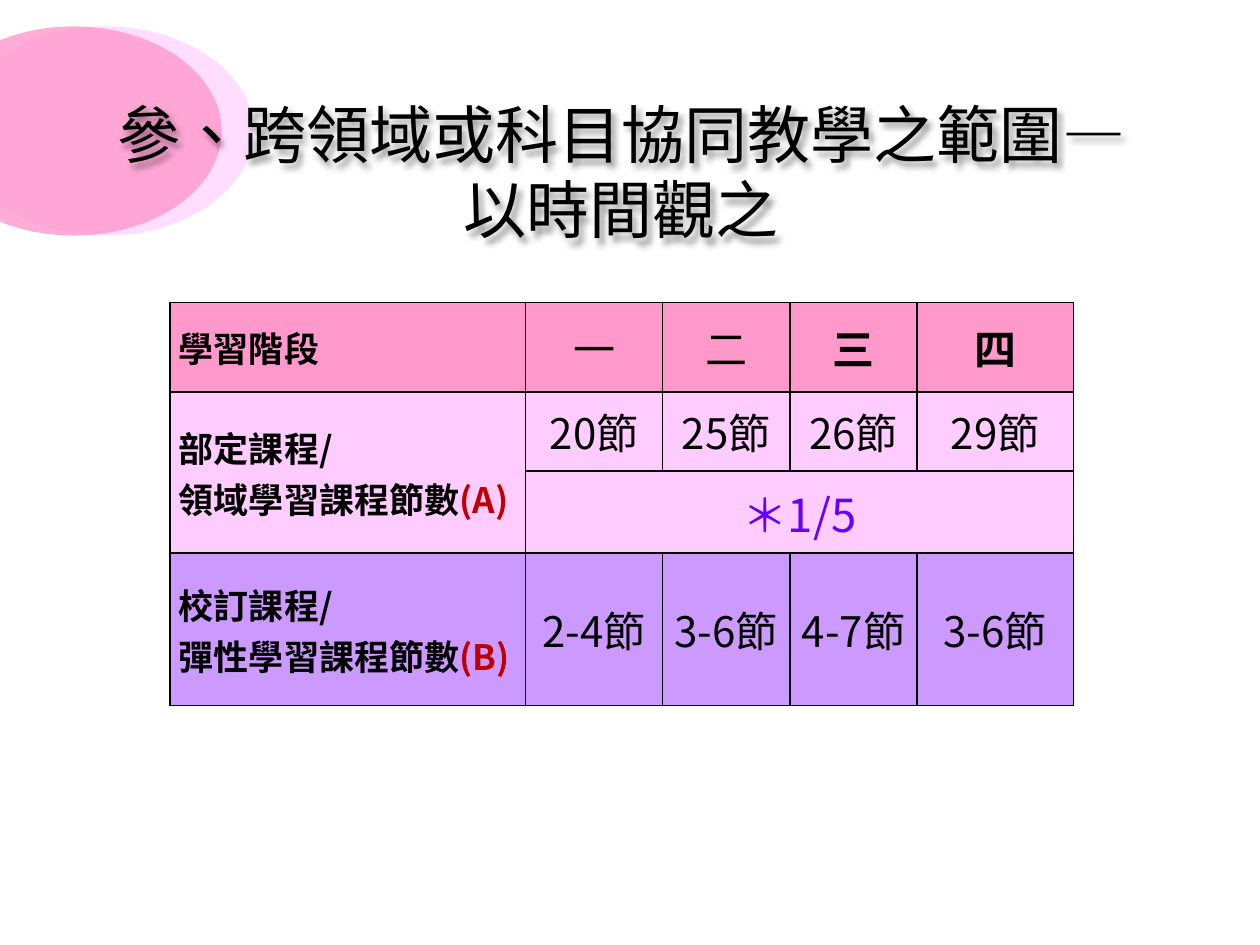
import pptx
import pptx.util
import pptx.dml.color
import pptx.enum.shapes
import pptx.enum.text
import pptx.oxml
import pptx.oxml.ns
from lxml import etree

Inches = pptx.util.Inches
Pt = pptx.util.Pt
qn = pptx.oxml.ns.qn
ALIGN = pptx.enum.text.PP_ALIGN
MIDDLE = pptx.enum.text.MSO_ANCHOR.MIDDLE
SANS = "Noto Sans CJK SC"
NS = 'xmlns:a="http://schemas.openxmlformats.org/drawingml/2006/main"'
COLORS = {
    "black": "000000", "red": "C00000", "blue": "6600FF", "pink": "FF99CC",
    "pale": "FFD5FF", "light": "FFCCFF", "violet": "CC99FF",
}


def rgb(name):
    return pptx.dml.color.RGBColor.from_string(COLORS[name])


def add_run(para, text, size, color="black", bold=False, face=SANS):
    run = para.add_run()
    run.text = text
    run.font.size = Pt(size)
    run.font.bold = bold
    run.font.color.rgb = rgb(color)
    run.font.name = face
    run.font._element.set("lang", "zh-TW")
    latin = run.font._element.find(qn("a:latin"))
    latin.addnext(pptx.oxml.parse_xml(f'<a:ea {NS} typeface="{SANS}"/>'))


deck = pptx.Presentation()
deck.slide_width = Inches(10)
deck.slide_height = Inches(7.5)
slide = deck.slides.add_slide(deck.slide_layouts[6])

group = slide.shapes.add_group_shape()
for left, color in ((-0.34, "pale"), (-0.59, "pink")):
    oval = group.shapes.add_shape(
        pptx.enum.shapes.MSO_SHAPE.OVAL,
        Inches(left), Inches(0.21), Inches(2.35), Inches(1.66))
    oval.shadow.inherit = False
    oval.fill.solid()
    oval.fill.fore_color.rgb = rgb(color)
    oval.line.fill.background()
    tint = oval._element.spPr.find(qn("a:solidFill"))[0]
    etree.SubElement(tint, qn("a:alpha"), val="80000")

title = slide.shapes.add_textbox(Inches(0.43), Inches(0.73), Inches(9), Inches(1.25))
title._element.spPr.append(pptx.oxml.parse_xml(
    f'<a:effectLst {NS}><a:outerShdw blurRad="50800" dist="38100" dir="2700000">'
    f'<a:srgbClr val="{COLORS["black"]}"><a:alpha val="40000"/></a:srgbClr>'
    '</a:outerShdw></a:effectLst>'))
frame = title.text_frame
frame.word_wrap = True
frame.vertical_anchor = MIDDLE
para = frame.paragraphs[0]
para.alignment = ALIGN.CENTER
for num, line in enumerate(("參、跨領域或科目協同教學之範圍—", "以時間觀之")):
    if num:
        para.add_line_break()
    add_run(para, line, 36, face="Times New Roman")

widths = (2.82, 1.09, 1.01, 1.01, 1.24)
heights = (0.71, 0.63, 0.65, 1.21)
fills = ("pink", "light", "light", "violet")
heads = {
    0: [[("學習階段", "black")]],
    1: [[("部定課程/", "black")], [("領域學習課程節數", "black"), ("(A)", "red")]],
    3: [[("校訂課程/", "black")], [("彈性學習課程節數", "black"), ("(B)", "red")]],
}
values = {
    0: ("一", "二", "三", "四"),
    1: ("20節", "25節", "26節", "29節"),
    2: ("＊1/5",),
    3: ("2-4節", "3-6節", "4-7節", "3-6節"),
}

table = slide.shapes.add_table(
    4, 5, Inches(1.35), Inches(2.4), Inches(sum(widths)), Inches(sum(heights))).table
for col, width in zip(table.columns, widths):
    col.width = Inches(width)
for row, height, fill in zip(table.rows, heights, fills):
    row.height = Inches(height)
    for cell in row.cells:
        cell.margin_left = cell.margin_right = Inches(0.07)
        cell.margin_top = cell.margin_bottom = 0
        cell.vertical_anchor = MIDDLE
        props = cell._tc.get_or_add_tcPr()
        for side in ("lnL", "lnR", "lnT", "lnB"):
            props.append(pptx.oxml.parse_xml(
                f'<a:{side} {NS} w="12700"><a:solidFill>'
                f'<a:srgbClr val="{COLORS["black"]}"/></a:solidFill></a:{side}>'))
        cell.fill.solid()
        cell.fill.fore_color.rgb = rgb(fill)
table.cell(1, 0).merge(table.cell(2, 0))
table.cell(2, 1).merge(table.cell(2, 4))

for row, lines in heads.items():
    frame = table.cell(row, 0).text_frame
    for num, parts in enumerate(lines):
        para = frame.add_paragraph() if num else frame.paragraphs[0]
        for text, color in parts:
            add_run(para, text, 20, color, True)

for row, texts in values.items():
    size, color = (26, "blue") if row == 2 else (24, "black")
    for col, text in enumerate(texts, 1):
        para = table.cell(row, col).text_frame.paragraphs[0]
        para.alignment = ALIGN.CENTER
        add_run(para, text, size, color, text in ("三", "四"))

deck.save("out.pptx")
